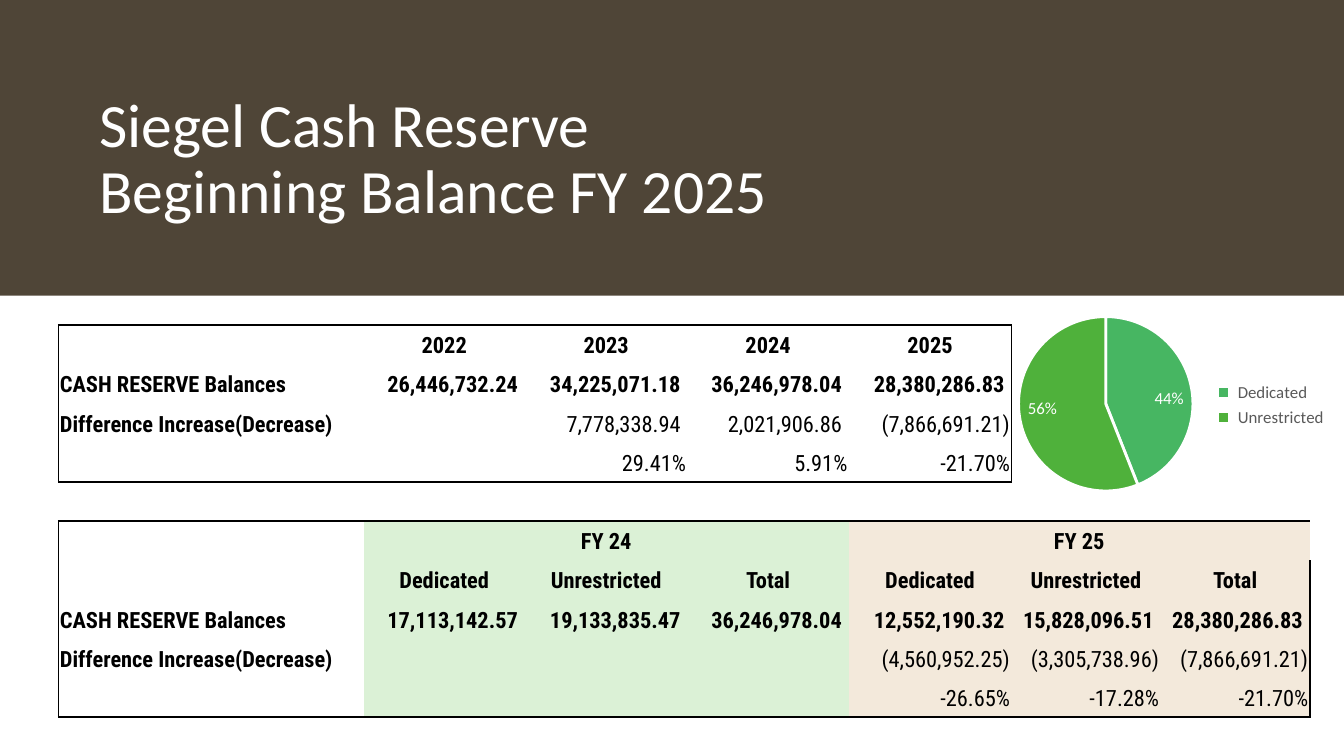
from lxml import etree
from pptx import Presentation
from pptx import util as u
from pptx.chart import data as chart_data
from pptx.dml import color
from pptx.enum import chart as chart_enum, shapes, text
from pptx.oxml import ns

COLORS = {
    "white": "FFFFFF", "black": "000000", "mist": "EAE5E9", "brown": "3F3424",
    "fy24": "DBF1D6", "fy25": "F3E9DB", "gray": "595959",
    "dedicated": "47B662", "unrestricted": "4FB13B",
}
BALANCES, DIFFERENCE = "CASH RESERVE Balances", "Difference Increase(Decrease)"
ROWS = [
    ["", "2022", "2023", "2024", "2025"],
    [BALANCES, "26,446,732.24", "34,225,071.18", "36,246,978.04", "28,380,286.83"],
    [DIFFERENCE, "", "7,778,338.94", "2,021,906.86", "(7,866,691.21)"],
    ["", "", "29.41%", "5.91%", "-21.70%"],
    [],
    ["", "FY 24", "", "", "FY 25"],
    [""] + ["Dedicated", "Unrestricted", "Total"] * 2,
    [BALANCES, "17,113,142.57", "19,133,835.47", "36,246,978.04",
     "12,552,190.32", "15,828,096.51", "28,380,286.83"],
    [DIFFERENCE, "", "", "", "(4,560,952.25)", "(3,305,738.96)", "(7,866,691.21)"],
    ["", "", "", "", "-26.65%", "-17.28%", "-21.70%"],
]
WIDTHS = [2.27, 1.2, 1.21, 1.2, 1.21, 1.11, 1.11]
HEADER_ROWS, BALANCE_ROWS, GAP_ROW, YEAR_ROW = (0, 5, 6), (1, 7), 4, 5
PLAIN_TABLE = "{2D5ABB26-0587-4C30-8999-92F81FD0307C}"


def rgb(name):
    """Return the named colour."""
    return color.RGBColor.from_string(COLORS[name])


def table_borders(row, column):
    """Tell for each side of a cell whether an outline runs along it."""
    upper, lower, within = row < GAP_ROW, row > GAP_ROW, column <= 4
    return {
        "L": row != GAP_ROW and column == 0 or upper and column == 5,
        "R": upper and column == 4 or row > YEAR_ROW and column == 6,
        "T": row in (0, GAP_ROW) and within or row == YEAR_ROW,
        "B": row == GAP_ROW - 1 and within or row in (GAP_ROW, len(ROWS) - 1),
    }


def table_fill(row, column):
    """Return the fiscal year tint of a cell, if it has one."""
    if row < YEAR_ROW or column == 0:
        return None
    return "fy24" if column < 4 else "fy25"


class SlideBuilder:
    """Holds the style and the current slide; lengths are percents of the slide."""

    font, table_font = "Calibri", "Roboto Condensed"

    def __init__(self, presentation):
        """Add a blank slide."""
        self.width, self.height = presentation.slide_width, presentation.slide_height
        self.slide = presentation.slides.add_slide(presentation.slide_layouts[6])

    def place(self, left, top, width, height):
        """Turn percents of the slide into lengths."""
        return [int(share * size / 100) for share, size in
                zip((left, top, width, height), (self.width, self.height) * 2)]

    def style(self, font, name, size, shade, bold=False):
        """Apply a typeface, size and colour to a font."""
        font.name, font.size, font.bold = name, u.Pt(size), bold
        font.color.rgb = rgb(shade)

    def panel(self, box, shade, opacity=100):
        """Add a plain rectangle."""
        shape = self.slide.shapes.add_shape(shapes.MSO_SHAPE.RECTANGLE, *self.place(*box))
        shape.shadow.inherit = False
        shape.line.fill.background()
        shape.fill.solid()
        shape.fill.fore_color.rgb = rgb(shade)
        if opacity < 100:
            shade_xml = shape.fill._xPr.find(".//" + ns.qn("a:srgbClr"))
            etree.SubElement(shade_xml, ns.qn("a:alpha"), val=str(opacity * 1000))

    def title(self, box, lines):
        """Add the title with one run per line."""
        frame = self.slide.shapes.add_textbox(*self.place(*box)).text_frame
        frame.word_wrap = True
        frame.vertical_anchor = text.MSO_ANCHOR.MIDDLE
        paragraph = frame.paragraphs[0]
        paragraph.line_spacing = 0.9
        for index, line in enumerate(lines):
            if index:
                paragraph.add_line_break()
            run = paragraph.add_run()
            run.text = line
            self.style(run.font, self.font, 33, "white")

    def cell(self, cell, row, column, words):
        """Fill one table cell."""
        properties = cell._tc.get_or_add_tcPr()
        for side, drawn in table_borders(row, column).items():
            line = etree.SubElement(properties, ns.qn("a:ln" + side), w=str(u.Pt(1)))
            paint = etree.SubElement(line, ns.qn("a:solidFill" if drawn else "a:noFill"))
            if drawn:
                etree.SubElement(paint, ns.qn("a:srgbClr"), val=COLORS["black"])
        shade = table_fill(row, column)
        if shade:
            cell.fill.solid()
            cell.fill.fore_color.rgb = rgb(shade)
        else:
            cell.fill.background()
        header, amount = row in HEADER_ROWS, words[-1:].isdigit()
        cell.vertical_anchor = text.MSO_ANCHOR.BOTTOM
        cell.margin_left = cell.margin_top = u.Inches(0.01)
        cell.margin_right = u.Inches(0.05 if amount and not header else 0.01)
        cell.margin_bottom = u.Inches(0.04)
        paragraph = cell.text_frame.paragraphs[0]
        if not words:
            paragraph._p.get_or_add_endParaRPr().set("sz", "1200")
            return
        align = text.PP_ALIGN
        paragraph.alignment = (align.LEFT if column == 0 else
                               align.CENTER if header else align.RIGHT)
        run = paragraph.add_run()
        run.text = words
        bold = header or column == 0 or row in BALANCE_ROWS
        self.style(run.font, self.table_font, 12, "black", bold)

    def table(self, box, rows, widths):
        """Add the table of balances."""
        table = self.slide.shapes.add_table(len(rows), len(widths), *self.place(*box)).table
        table.first_row = table.horz_banding = False
        table._tbl.tblPr.find(ns.qn("a:tableStyleId")).text = PLAIN_TABLE
        for column, width in zip(table.columns, widths):
            column.width = u.Inches(width)
        for row, words in enumerate(rows):
            for column in range(len(widths)):
                word = words[column] if column < len(words) else ""
                self.cell(table.cell(row, column), row, column, word)
        for column in (1, 4):
            table.cell(YEAR_ROW, column).merge(table.cell(YEAR_ROW, column + 2))

    def pie(self, box, shares, layout):
        """Add a pie chart with percent labels and a legend."""
        data = chart_data.CategoryChartData()
        data.categories = [f" {name.capitalize()} " for name in shares]
        data.add_series("Series 1", shares.values())
        chart = self.slide.shapes.add_chart(
            chart_enum.XL_CHART_TYPE.PIE, *self.place(*box), data).chart
        self.style(chart.font, self.font, 10, "black")
        chart.has_title = False
        chart.has_legend = True
        chart.legend.position = chart_enum.XL_LEGEND_POSITION.RIGHT
        chart.legend.include_in_layout = False
        self.style(chart.legend.font, self.font, 9, "gray")
        plot = chart.plots[0]
        plot.vary_by_categories = True
        for index, name in enumerate(shares):
            slice_format = plot.series[0].points[index].format
            slice_format.fill.solid()
            slice_format.fill.fore_color.rgb = rgb(name)
            slice_format.line.color.rgb = rgb("white")
            slice_format.line.width = u.Pt(1.5)
        plot.has_data_labels = True
        labels = plot.data_labels
        labels.show_percentage, labels.show_value = True, False
        labels.number_format, labels.number_format_is_linked = "0%", False
        labels.position = chart_enum.XL_LABEL_POSITION.INSIDE_END
        self.style(labels.font, self.font, 9, "white")
        area = chart._chartSpace.find(".//" + ns.qn("c:plotArea"))
        for old in area.findall(ns.qn("c:layout")):
            area.remove(old)
        outer = etree.Element(ns.qn("c:layout"))
        area.insert(0, outer)
        manual = etree.SubElement(outer, ns.qn("c:manualLayout"))
        settings = {"layoutTarget": "inner", "xMode": "edge", "yMode": "edge", **layout}
        for tag, value in settings.items():
            etree.SubElement(manual, ns.qn("c:" + tag), val=str(value))


def main():
    """Build and save the slide."""
    presentation = Presentation()
    presentation.slide_width = u.Inches(10)
    presentation.slide_height = presentation.slide_width * 9 // 16
    builder = SlideBuilder(presentation)
    for shade, opacity in (("white", 100), ("mist", 90), ("brown", 90)):
        builder.panel((0, 0, 100, 100), shade, opacity)
    builder.title((6.4, 7.2, 89.7, 28.1), ["Siegel Cash Reserve", "Beginning Balance FY 2025"])
    builder.panel((0, 39.1, 100, 60.9), "white")
    builder.table((4.36, 43.02, 93.1, 51.9), ROWS, WIDTHS)
    builder.pie((74.5, 38.2, 25.5, 30.76), {"dedicated": 44, "unrestricted": 56},
                {"x": 0.05, "y": 0.12, "w": 0.51, "h": 0.75})
    presentation.save("out.pptx")


if __name__ == "__main__":
    main()
